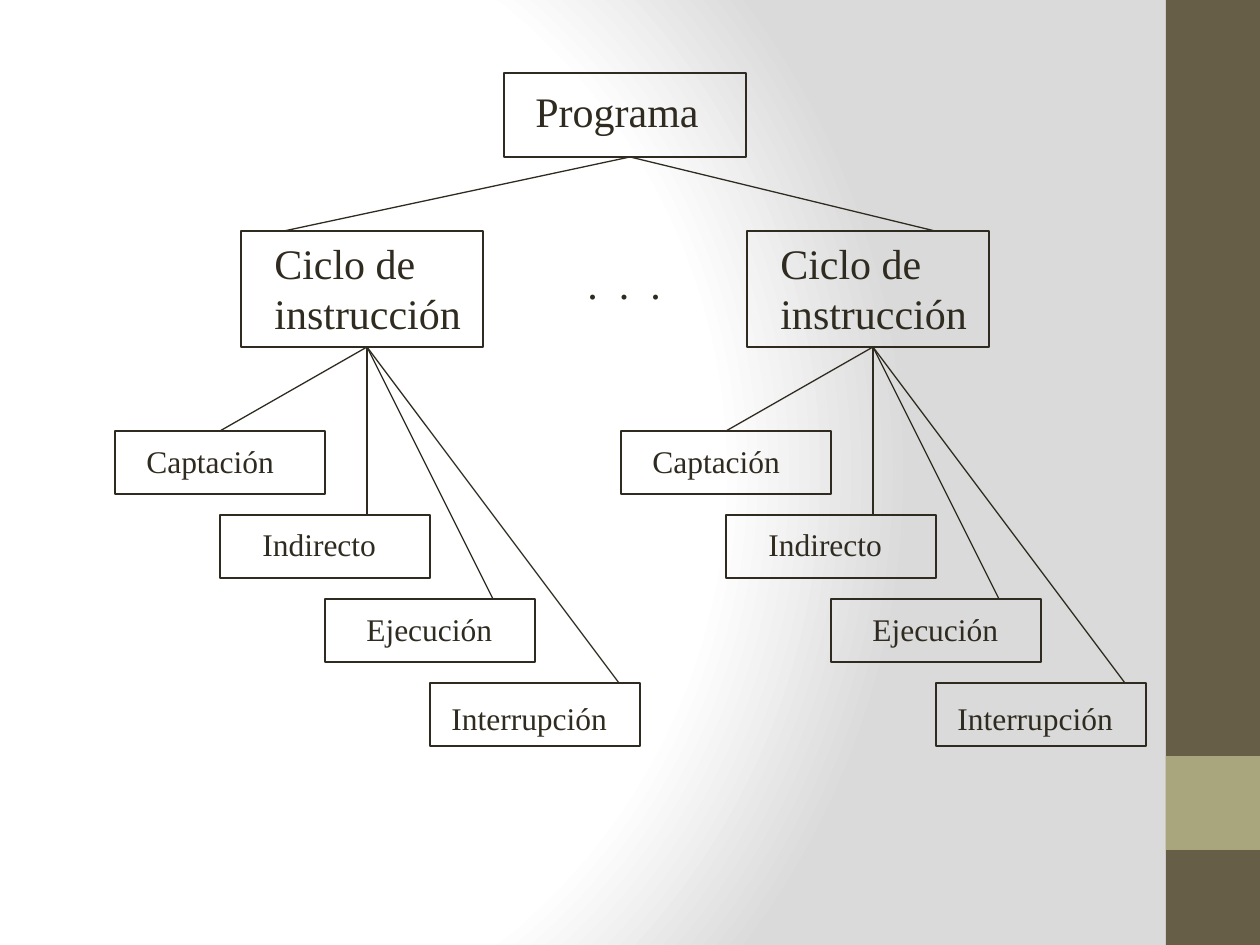
from lxml import etree
from pptx import Presentation
from pptx import oxml
from pptx import util as u
from pptx.dml.color import RGBColor
from pptx.enum import shapes, text
from pptx.oxml.ns import nsdecls, qn

PX_PER_INCH = 126
COLORS = {
    "ink": "2F2B20",
    "sidebar": "675E47",
    "accent": "A9A57C",
    "white": "FFFFFF",
    "gray": "DADADA",
}
PHASES = [
    # name, label left and top within its box, label width, line end from cycle left
    ("Captación", 19, 5, 154, 105),
    ("Indirecto", 30, 4, 139, 252),
    ("Ejecución", 29, 5, 151, 378),
    ("Interrupción", 9, 10, 181, 504),
]


def px(length):
    return u.Emu(round(length * u.Inches(1) / PX_PER_INCH))


def color(name):
    return RGBColor.from_string(COLORS[name])


def write(box, content, size=24, font="Times New Roman", ink="ink"):
    """Fill a box with one paragraph per line of content."""
    frame = box.text_frame
    frame.word_wrap = False
    frame.auto_size = text.MSO_AUTO_SIZE.SHAPE_TO_FIT_TEXT
    for index, line in enumerate(content.split("\n")):
        para = frame.add_paragraph() if index else frame.paragraphs[0]
        span = para.add_run()
        span.text = line
        span.font.size = u.Pt(size)
        span.font.name = font
        span.font.color.rgb = color(ink)


class Diagram:
    line_width = u.Pt(0.75)

    def __init__(self, slide):
        self.slide = slide
        self.target = slide.shapes

    def group(self):
        """Send the following elements to a new group."""
        self.target = self.slide.shapes.add_group_shape().shapes

    def ungroup(self):
        self.target = self.slide.shapes

    def background(self):
        fill = self.slide.background.fill
        fill.gradient()
        stops = "".join(
            f'<a:gs pos="{position * 1000}"><a:srgbClr val="{COLORS[name]}"/></a:gs>'
            for position, name in [(0, "white"), (75, "white"), (100, "gray")]
        )
        gradient = oxml.parse_xml(
            f'<a:gradFill rotWithShape="1" {nsdecls("a")}><a:gsLst>{stops}</a:gsLst>'
            '<a:path path="circle"><a:fillToRect l="20000" t="50000" '
            'r="100000" b="50000"/></a:path></a:gradFill>'
        )
        old = next(self.slide.element.iter(qn("a:gradFill")))
        old.getparent().replace(old, gradient)

    def box(self, left, top, width, height, fill=None):
        """A filled block, or an outlined frame when there is no fill."""
        box = self.target.add_shape(
            shapes.MSO_SHAPE.RECTANGLE, px(left), px(top), px(width), px(height)
        )
        box.shadow.inherit = False
        if fill:
            box.fill.solid()
            box.fill.fore_color.rgb = color(fill)
            box.line.fill.background()
        else:
            box.fill.background()
            box.line.color.rgb = color("ink")
            box.line.width = self.line_width

    def label(self, content, left, top, width, height, **style):
        box = self.target.add_textbox(px(left), px(top), px(width), px(height))
        write(box, content, **style)

    def line(self, start, end):
        line = self.target.add_connector(
            shapes.MSO_CONNECTOR.STRAIGHT, *map(px, (*start, *end))
        )
        line.line.color.rgb = color("ink")
        line.line.width = self.line_width
        etree.SubElement(line.element.spPr, qn("a:effectLst"))

    def cycle(self, left):
        """An instruction cycle with its staircase of phases."""
        self.group()
        self.label("Ciclo de\ninstrucción", left + 147, 231, 212, 113)
        self.box(left + 126, 231, 242, 116)
        for step, (name, dx, dy, width, line_end) in enumerate(PHASES):
            box_left, box_top = left + 105 * step, 431 + 84 * step
            self.label(name, box_left + dx, box_top + dy, width, 50, size=18)
            self.box(box_left, box_top, 210, 63)
            self.line((left + 252, 347), (left + line_end, box_top))
        self.ungroup()


def main():
    deck = Presentation()
    deck.slide_width, deck.slide_height = px(1260), px(945)
    page = Diagram(deck.slides.add_slide(deck.slide_layouts[6]))

    # Background and sidebar
    page.background()
    page.box(1166, 0, 94, 945, fill="sidebar")
    page.box(1166, 756, 94, 94, fill="accent")

    # Program at the top of the tree
    page.group()
    page.label("Programa", 523, 79, 189, 63)
    page.box(504, 73, 242, 84)
    page.ungroup()
    for end in (284, 935):
        page.line((630, 157), (end, 231))

    # Instruction cycles
    for left in (115, 621):
        page.cycle(left)
    page.label(".  .  .", 575, 251, 100, 63)

    deck.save("out.pptx")


if __name__ == "__main__":
    main()
